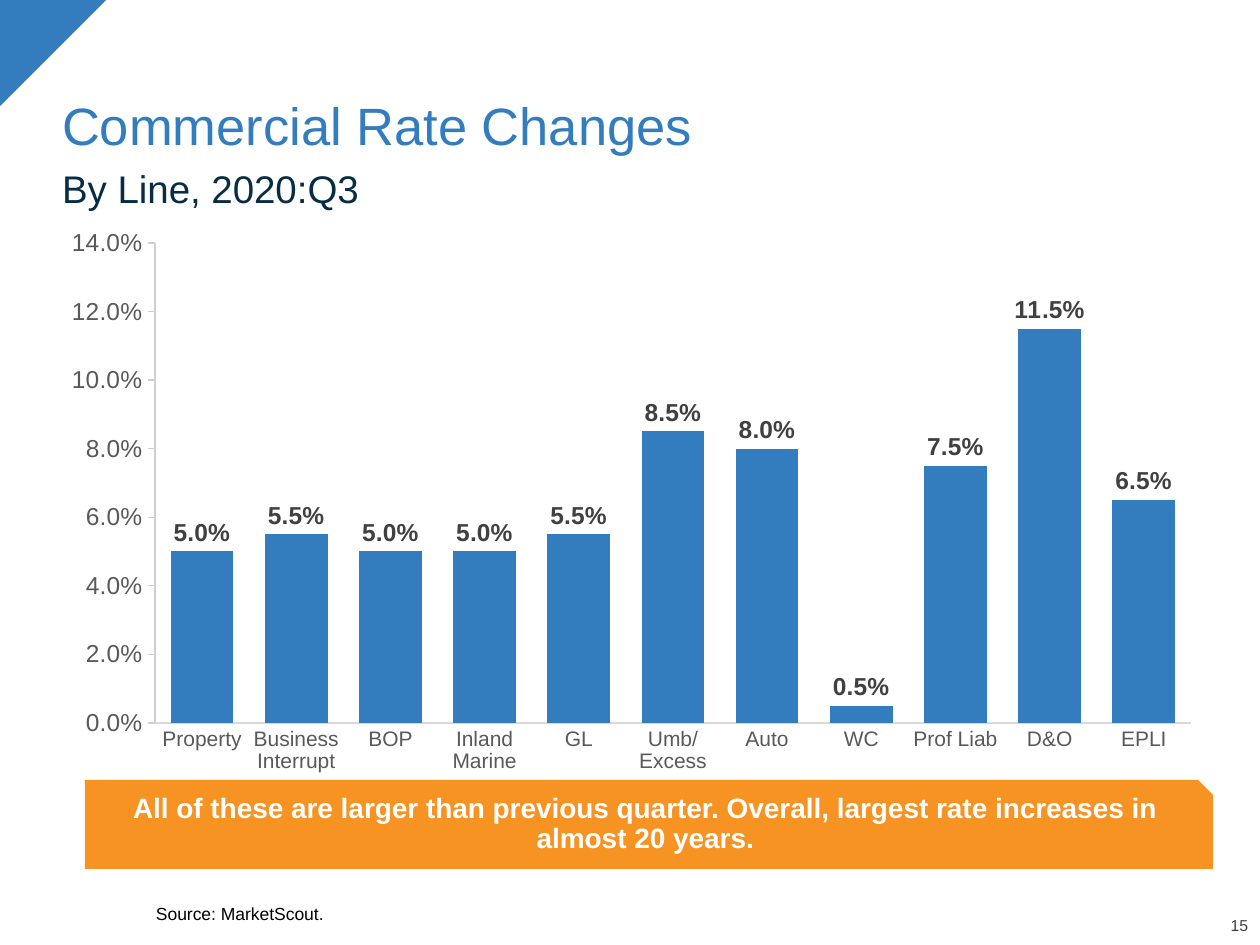
from dataclasses import dataclass

from lxml import etree
from pptx import Presentation
from pptx.chart.data import CategoryChartData
from pptx.dml.color import RGBColor as RGB
from pptx.enum.chart import XL_CHART_TYPE as ChartType
from pptx.enum.chart import XL_LABEL_POSITION as LabelPos
from pptx.enum.chart import XL_TICK_MARK as Tick
from pptx.enum.shapes import MSO_SHAPE as Shape
from pptx.enum.text import MSO_ANCHOR as Anchor
from pptx.enum.text import PP_ALIGN as Align
from pptx.oxml.ns import qn
from pptx.util import Emu, Pt

EMU_PER_PX = 914400 / 126


def px(n: int) -> Emu:
    return Emu(round(n * EMU_PER_PX))


@dataclass(frozen=True)
class Theme:
    font: str = "Arial"
    blue: str = "337DBE"
    navy: str = "072C44"
    orange: str = "F69322"
    white: str = "FFFFFF"
    black: str = "000000"
    label: str = "404040"
    axis: str = "595959"
    cat_line: str = "D9D9D9"
    val_line: str = "D0D0D3"
    title_size: int = 30
    subtitle_size: int = 22
    callout_size: int = 16
    value_size: int = 14
    cat_size: int = 12
    source_size: int = 10
    number_size: int = 9


T = Theme()


@dataclass(frozen=True)
class Box:
    x: int
    y: int
    w: int
    h: int

    def emu(self) -> tuple[Emu, ...]:
        return px(self.x), px(self.y), px(self.w), px(self.h)


@dataclass(frozen=True)
class Label:
    text: str
    box: Box
    size: int
    color: str
    anchor: Anchor = Anchor.TOP
    align: Align = Align.LEFT
    margins: tuple[int, int, int, int] = (0, 0, 0, 0)
    bold: bool = False
    before: int = 0


INSET = (13, 6, 13, 6)
LABELS = [
    Label("Commercial Rate Changes", Box(49, 32, 1166, 131), T.title_size, T.blue,
          Anchor.BOTTOM, margins=INSET),
    Label("By Line, 2020:Q3", Box(49, 164, 1166, 54), T.subtitle_size, T.navy,
          margins=INSET),
    Label("Source: MarketScout.", Box(156, 867, 1058, 57), T.source_size, T.black,
          Anchor.BOTTOM, before=2),
    Label("15", Box(1188, 918, 60, 17), T.number_size, T.label, Anchor.BOTTOM,
          Align.RIGHT),
]
CALLOUT = Label(
    "All of these are larger than previous quarter. Overall, largest rate increases "
    "in almost 20 years.",
    Box(85, 780, 1128, 89), T.callout_size, T.white, Anchor.MIDDLE, Align.CENTER,
    (13, 6, 13, 13), True)
CORNER = Box(0, 0, 106, 106)
CHART = Box(49, 218, 1166, 573)
PLOT = Box(155, 243, 1036, 480)
RATES = {
    "Property": 0.05, "Business Interrupt": 0.055, "BOP": 0.05,
    "Inland Marine": 0.05, "GL": 0.055, "Umb/Excess": 0.085, "Auto": 0.08,
    "WC": 0.005, "Prof Liab": 0.075, "D&O": 0.115, "EPLI": 0.065,
}


def set_font(font, size: int, color: str, bold: bool = False) -> None:
    font.name, font.size, font.bold = T.font, Pt(size), bold
    font.color.rgb = RGB.from_string(color)


def write(sp, label: Label) -> None:
    tf = sp.text_frame
    tf.word_wrap = True
    tf.vertical_anchor = label.anchor
    (tf.margin_left, tf.margin_top,
     tf.margin_right, tf.margin_bottom) = map(px, label.margins)
    p = tf.paragraphs[0]
    p.text = label.text
    p.alignment = label.align
    p.line_spacing = 0.9
    if label.before:
        p.space_before = Pt(label.before)
    set_font(p.font, label.size, label.color, label.bold)


def add_label(s, label: Label) -> None:
    write(s.shapes.add_textbox(*label.box.emu()), label)


def add_filled(s, kind: Shape, box: Box, color: str):
    sp = s.shapes.add_shape(kind, *box.emu())
    sp.shadow.inherit = False
    sp.fill.solid()
    sp.fill.fore_color.rgb = RGB.from_string(color)
    sp.line.fill.background()
    return sp


def style_axis(axis, size: int, line: str, tick: Tick) -> None:
    axis.has_major_gridlines = False
    axis.major_tick_mark, axis.minor_tick_mark = tick, Tick.NONE
    axis.format.line.color.rgb = RGB.from_string(line)
    axis.format.line.width = Pt(0.75)
    set_font(axis.tick_labels.font, size, T.axis)


def place_plot(chart, outer: Box, inner: Box) -> None:
    area = chart.element.find(".//" + qn("c:plotArea"))
    for old in area.findall(qn("c:layout")):
        area.remove(old)
    layout = etree.Element(qn("c:layout"))
    area.insert(0, layout)
    manual = etree.SubElement(layout, qn("c:manualLayout"))
    settings = {
        "layoutTarget": "inner", "xMode": "edge", "yMode": "edge",
        "x": (inner.x - outer.x) / outer.w, "y": (inner.y - outer.y) / outer.h,
        "w": inner.w / outer.w, "h": inner.h / outer.h,
    }
    for tag, value in settings.items():
        etree.SubElement(manual, qn(f"c:{tag}")).set("val", str(value))


def add_rate_chart(s, box: Box, plot_box: Box, rates: dict[str, float]) -> None:
    data = CategoryChartData(number_format="0.0%")
    data.categories = list(rates)
    data.add_series("Series 1", list(rates.values()))
    chart = s.shapes.add_chart(ChartType.COLUMN_CLUSTERED, *box.emu(), data).chart
    chart.has_legend = chart.has_title = False
    set_font(chart.font, T.source_size, T.black)
    style_axis(chart.category_axis, T.cat_size, T.cat_line, Tick.NONE)
    values = chart.value_axis
    style_axis(values, T.value_size, T.val_line, Tick.OUTSIDE)
    values.minimum_scale, values.maximum_scale, values.major_unit = 0, 0.14, 0.02
    values.tick_labels.number_format = "0.0%"
    values.tick_labels.number_format_is_linked = False

    plot = chart.plots[0]
    plot.gap_width = 50
    plot.vary_by_categories = False
    series = plot.series[0]
    series.format.fill.solid()
    series.format.fill.fore_color.rgb = RGB.from_string(T.blue)
    labels = series.data_labels
    labels.show_value = True
    labels.position = LabelPos.OUTSIDE_END
    labels.number_format, labels.number_format_is_linked = "0.0%", False
    set_font(labels.font, T.value_size, T.label, True)
    place_plot(chart, box, plot_box)


def main() -> None:
    prs = Presentation()
    prs.slide_width, prs.slide_height = px(1260), px(945)
    s = prs.slides.add_slide(prs.slide_layouts[6])
    add_filled(s, Shape.RIGHT_TRIANGLE, CORNER, T.blue).rotation = 90
    for label in LABELS:
        add_label(s, label)
    add_rate_chart(s, CHART, PLOT, RATES)
    write(add_filled(s, Shape.SNIP_1_RECTANGLE, CALLOUT.box, T.orange), CALLOUT)
    prs.save("out.pptx")


if __name__ == "__main__":
    main()
